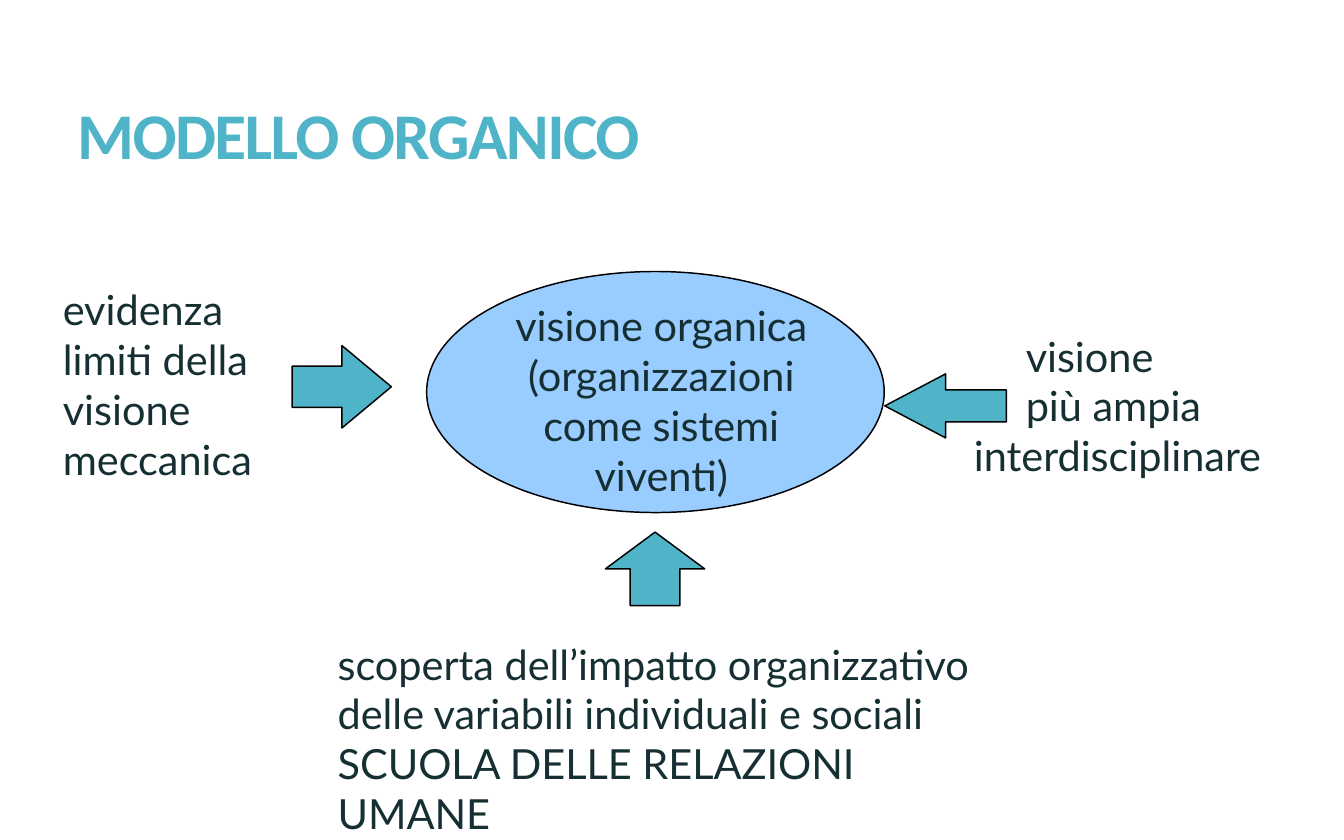
from pptx import Presentation
from pptx.dml.color import RGBColor
from pptx.enum.shapes import MSO_SHAPE
from pptx.enum.text import MSO_ANCHOR, PP_ALIGN
from pptx.util import Pt

ELLIPSE = MSO_SHAPE.OVAL
RIGHT_ARROW = MSO_SHAPE.RIGHT_ARROW
UP_ARROW = MSO_SHAPE.UP_ARROW
LEFT_ARROW = MSO_SHAPE.LEFT_ARROW
LEFT, CENTER = PP_ALIGN.LEFT, PP_ALIGN.CENTER
TOP, MIDDLE = MSO_ANCHOR.TOP, MSO_ANCHOR.MIDDLE

COLORS = {"accent": "50B4C8", "oval": "99CCFF", "outline": "000000", "text": "162F33"}
TITLE_FONT = {"name": "Calibri", "size": Pt(44), "bold": True}
BODY_FONT = {"name": "Lato", "size": Pt(28), "bold": False}
TITLE_FRAME = {"word_wrap": True, "vertical_anchor": MIDDLE}
BODY_FRAME = {
    "word_wrap": True,
    "vertical_anchor": TOP,
    "margin_left": Pt(8.64),
    "margin_right": Pt(8.64),
    "margin_top": Pt(4.32),
    "margin_bottom": Pt(4.32),
}


def color(name):
    """Return the named colour."""
    return RGBColor.from_string(COLORS[name])


def apply_format(target, values):
    """Set each format value on the target."""
    for name, value in values.items():
        setattr(target, name, value)


def add_shape(slide, kind, box, fill, adjustments=()):
    """Add an outlined preset shape."""
    shape = slide.shapes.add_shape(kind, *map(Pt, box))
    shape.shadow.inherit = False
    shape.fill.solid()
    shape.fill.fore_color.rgb = color(fill)
    shape.line.color.rgb = color("outline")
    shape.line.width = Pt(1)
    for index, value in enumerate(adjustments):
        shape.adjustments[index] = value


def add_text(slide, box, lines, font=BODY_FONT, frame=BODY_FRAME,
             ink="text", alignment=LEFT, indents=()):
    """Add a text box with one paragraph per line and return its paragraphs."""
    text_frame = slide.shapes.add_textbox(*map(Pt, box)).text_frame
    apply_format(text_frame, frame)
    text_frame.text = "\n".join(lines)
    for paragraph in text_frame.paragraphs:
        paragraph.alignment = alignment
        apply_format(paragraph.runs[0].font, font)
        paragraph.runs[0].font.color.rgb = color(ink)
    for paragraph, indent in zip(text_frame.paragraphs, indents):
        paragraph._p.get_or_add_pPr().set("marL", str(Pt(indent)))
    return text_frame.paragraphs


def add_title(slide, text):
    """Add the tightly spaced slide title."""
    paragraph = add_text(slide, (45, 37.4, 805, 113.8), [text],
                         TITLE_FONT, TITLE_FRAME, "accent")[0]
    paragraph.line_spacing = 0.85
    paragraph.runs[0].font._element.set("spc", "-110")


def main():
    """Build and save the slide."""
    presentation = Presentation()
    presentation.slide_width = Pt(907.25)
    presentation.slide_height = Pt(567)
    slide = presentation.slides.add_slide(presentation.slide_layouts[6])

    add_title(slide, "MODELLO ORGANICO")
    add_shape(slide, ELLIPSE, (288, 183.3, 308.9, 162.7), "oval")
    add_text(slide, (338.4, 198.4, 216, 143.3),
             ["visione organica", "(organizzazioni", "come sistemi", "viventi)"],
             alignment=CENTER)

    arrows = [
        (RIGHT_ARROW, (197.2, 233.3, 67, 55.6), (0.5, 0.6)),
        (UP_ARROW, (408.7, 359.2, 67, 49.6), (0.5, 0.5)),
        (LEFT_ARROW, (597.3, 252.4, 82, 43.2), (0.5, 0.95)),
    ]
    for kind, box, adjustments in arrows:
        add_shape(slide, kind, box, "accent", adjustments)

    add_text(slide, (219.3, 426.8, 467.3, 110.2),
             ["scoperta dell’impatto organizzativo",
              "delle variabili individuali e sociali",
              "SCUOLA DELLE RELAZIONI UMANE"])
    add_text(slide, (33.8, 187.6, 167, 143.3),
             ["evidenza", "limiti della", "visione", "meccanica"])
    add_text(slide, (627.8, 218.9, 255.6, 97.9),
             ["visione", "più ampia", "interdisciplinare"],
             indents=(56, 56, 21))

    presentation.save("out.pptx")


if __name__ == "__main__":
    main()
